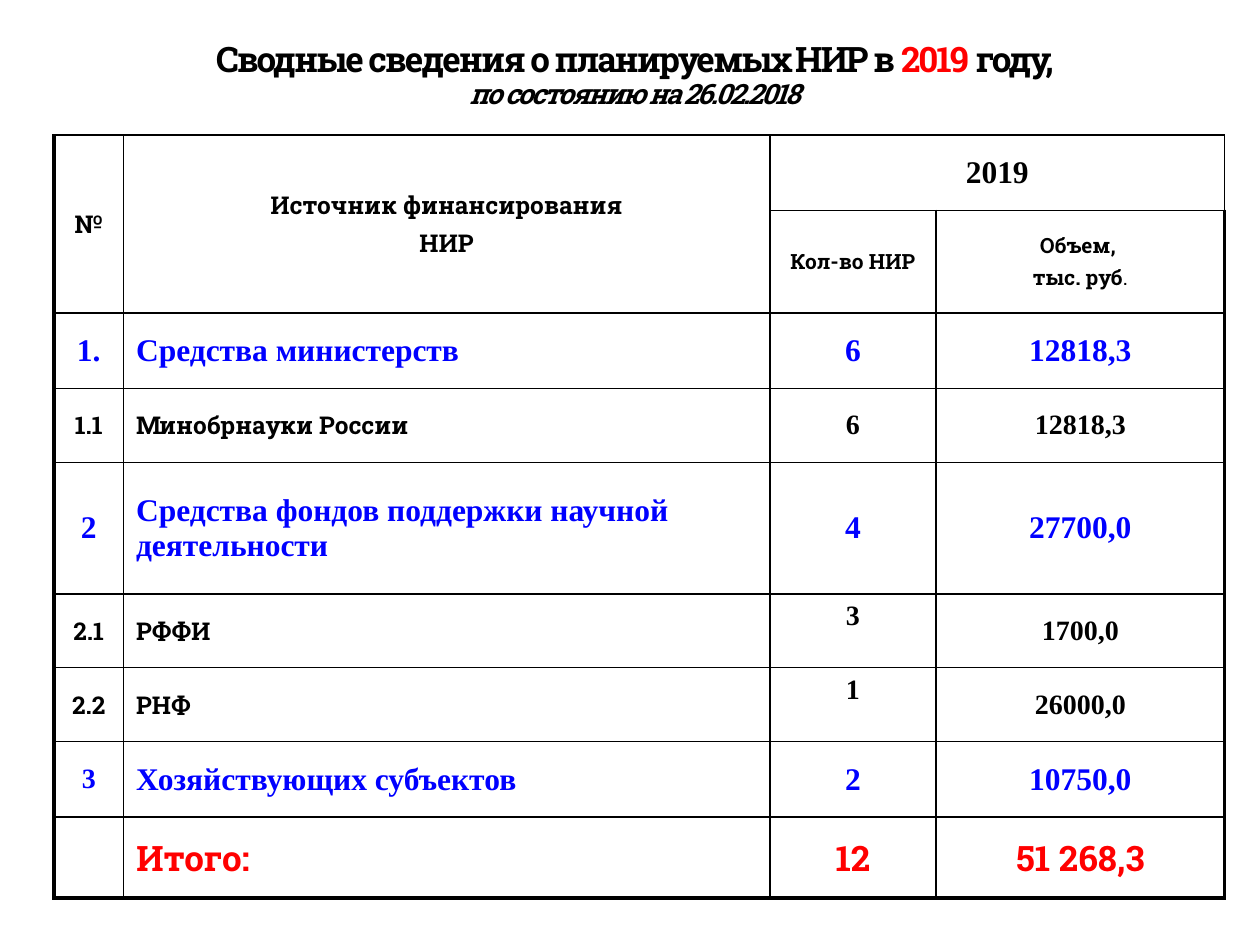
from dataclasses import dataclass

from lxml.etree import SubElement
from pptx import Presentation
from pptx.dml.color import RGBColor
from pptx.enum.text import MSO_ANCHOR, PP_ALIGN
from pptx.oxml.ns import qn
from pptx.util import Cm, Pt

SLAB, TIMES = "Roboto Slab", "Times New Roman"
BLACK, BLUE, RED = "000000", "0000FF", "FF0000"
THIN, THICK = 1, 2.25
COLUMN_WIDTHS = [1.4, 13.03, 3.35, 5.82]
ROW_HEIGHTS = [1.52, 2.07, 1.52, 1.49, 2.65, 1.49, 1.49, 1.52, 1.63]


@dataclass
class Style:
    size: float
    face: str
    color: str = BLACK


@dataclass
class Row:
    texts: list[str]
    styles: list[Style]
    count_anchor: MSO_ANCHOR = MSO_ANCHOR.MIDDLE


HEADING, SUBHEADING = Style(14, SLAB), Style(12, SLAB)
YEAR, FIGURE = Style(18, TIMES), Style(16, TIMES)
GROUP, GROUP_SMALL = Style(18, TIMES, BLUE), Style(16, TIMES, BLUE)
TOTAL = Style(20, SLAB, RED)
ITEM_STYLES = [HEADING, HEADING, FIGURE, FIGURE]

BODY = [
    Row(["1.", "Средства министерств", "6", "12818,3"], [GROUP] * 4),
    Row(["1.1", "Минобрнауки России", "6", "12818,3"], ITEM_STYLES),
    Row(["2", "Средства фондов поддержки научной деятельности", "4", "27700,0"], [GROUP] * 4),
    Row(["2.1", "РФФИ", "3", "1700,0"], ITEM_STYLES, MSO_ANCHOR.TOP),
    Row(["2.2", "РНФ", "1", "26000,0"], ITEM_STYLES, MSO_ANCHOR.TOP),
    Row(["3", "Хозяйствующих субъектов", "2", "10750,0"], [GROUP_SMALL] + [GROUP] * 3),
    Row(["", "Итого:", "12", "51 268,3"], [TOTAL] * 4),
]


def set_font(font, style: Style) -> None:
    font.size, font.name, font.bold = Pt(style.size), style.face, True
    font.color.rgb = RGBColor.from_string(style.color)


def write_cell(cell, lines: list[str], style: Style, align=PP_ALIGN.CENTER,
               anchor=MSO_ANCHOR.MIDDLE) -> None:
    cell.vertical_anchor = anchor
    frame = cell.text_frame
    for index, line in enumerate(lines):
        para = frame.paragraphs[0] if index == 0 else frame.add_paragraph()
        para.alignment = align
        para.space_before = Pt(style.size * 0.2)
        set_font(para.font, style)
        span = para.add_run()
        span.text = line
        set_font(span.font, style)


def set_borders(cell, widths: dict[str, float]) -> None:
    properties = cell._tc.get_or_add_tcPr()
    for side, width in widths.items():
        line = SubElement(properties, qn(f"a:ln{side}"), w=str(int(Pt(width))))
        fill = SubElement(line, qn("a:solidFill"))
        SubElement(fill, qn("a:srgbClr"), val=BLACK)
    cell.fill.background()


def add_title(page) -> None:
    box = page.shapes.add_textbox(Cm(1.5), Cm(0.53), Cm(22.6), Cm(2.01))
    frame = box.text_frame
    frame.word_wrap = True
    frame.vertical_anchor = MSO_ANCHOR.MIDDLE
    para = frame.paragraphs[0]
    para.alignment, para.line_spacing = PP_ALIGN.CENTER, 0.9
    parts = [
        ("Сводные сведения о планируемых НИР в ", Style(20, SLAB)),
        ("2019 ", TOTAL),
        ("году,", Style(20, SLAB)),
        ("по состоянию на 26.02.2018", Style(16, SLAB)),
    ]
    for text, style in parts:
        is_date = style.size == 16
        if is_date:
            para.add_line_break()
        span = para.add_run()
        span.text = text
        set_font(span.font, style)
        span.font.italic = is_date
        span._r.get_or_add_rPr().set("spc", "-120")


def add_summary_table(page) -> None:
    table = page.shapes.add_table(
        len(ROW_HEIGHTS), len(COLUMN_WIDTHS), Cm(1.09), Cm(2.72),
        Cm(sum(COLUMN_WIDTHS)), Cm(sum(ROW_HEIGHTS))).table
    table.first_row = table.horz_banding = False
    for column, width in zip(table.columns, COLUMN_WIDTHS):
        column.width = Cm(width)
    for row, height in zip(table.rows, ROW_HEIGHTS):
        row.height = Cm(height)

    # Borders: heavy outer frame, thin inner grid
    last_row, last_column = len(ROW_HEIGHTS) - 1, len(COLUMN_WIDTHS) - 1
    for r in range(last_row + 1):
        for c in range(last_column + 1):
            set_borders(table.cell(r, c), {
                "L": THICK if c == 0 else THIN,
                "R": THICK if c == last_column and r > 0 else THIN,
                "T": THIN,
                "B": THICK if r == last_row else THIN,
            })

    # Header
    for column in (0, 1):
        table.cell(0, column).merge(table.cell(1, column))
    table.cell(0, 2).merge(table.cell(0, 3))
    write_cell(table.cell(0, 0), ["№"], HEADING)
    write_cell(table.cell(0, 1), ["Источник финансирования", "НИР"], HEADING)
    write_cell(table.cell(0, 2), ["2019"], YEAR)
    write_cell(table.cell(1, 2), ["Кол-во НИР"], SUBHEADING)
    volume = table.cell(1, 3)
    write_cell(volume, ["Объем, ", "тыс. руб"], SUBHEADING)
    period = volume.text_frame.paragraphs[1].add_run()
    period.text = "."
    set_font(period.font, SUBHEADING)
    period.font.bold = False

    # Funding sources and total
    for r, row in enumerate(BODY, start=2):
        for c, (text, style) in enumerate(zip(row.texts, row.styles)):
            if text:
                write_cell(table.cell(r, c), [text], style,
                           PP_ALIGN.LEFT if c == 1 else PP_ALIGN.CENTER,
                           row.count_anchor if c == 2 else MSO_ANCHOR.MIDDLE)


def main() -> None:
    deck = Presentation()
    deck.slide_width, deck.slide_height = Cm(25.4), Cm(19.05)
    page = deck.slides.add_slide(deck.slide_layouts[6])
    add_title(page)
    add_summary_table(page)
    deck.save("out.pptx")


if __name__ == "__main__":
    main()
